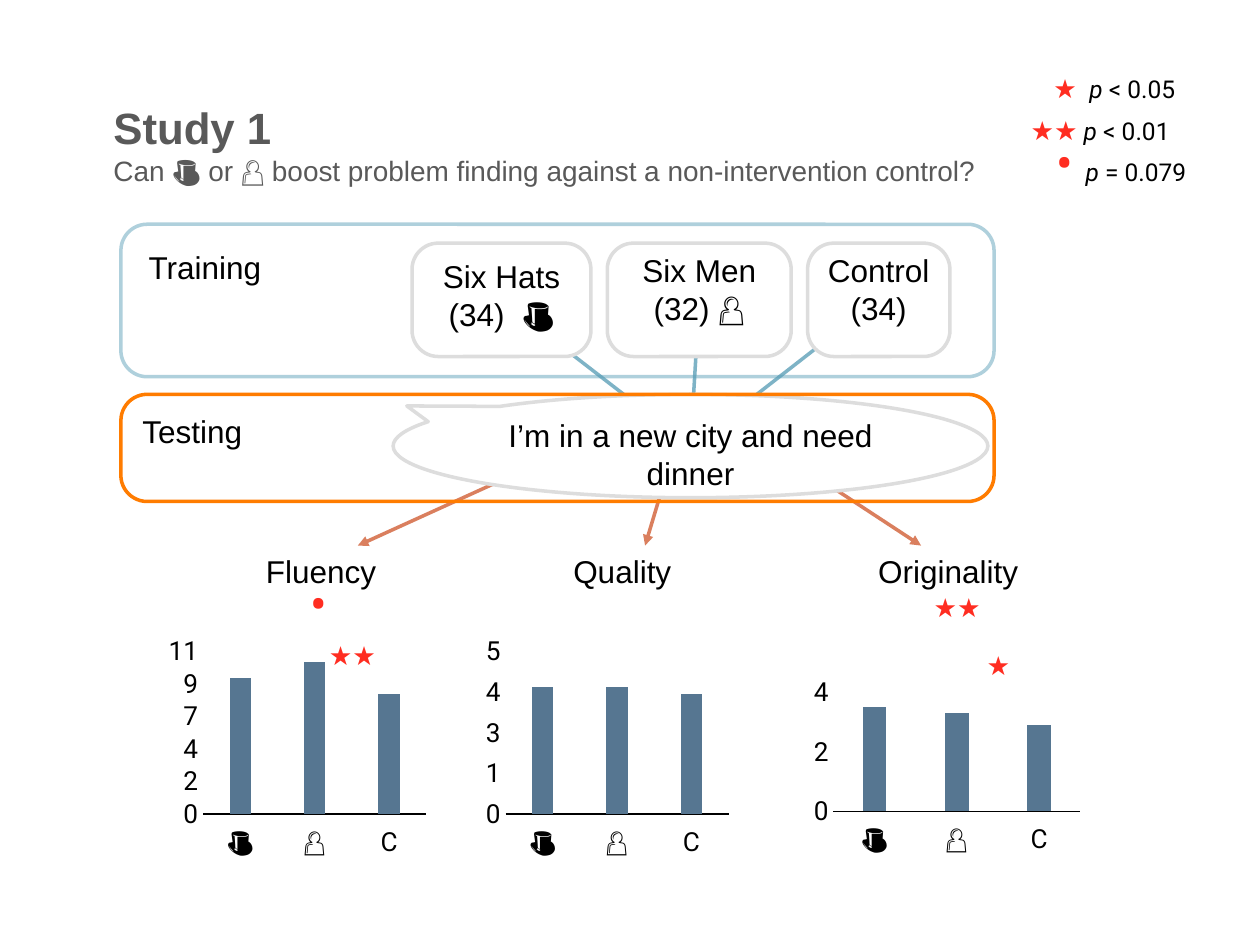
from pptx import Presentation
from pptx import util as u
from pptx.chart import data as cd
from pptx.dml.color import RGBColor
from pptx.enum import chart as ch, shapes, text
from pptx.oxml import parse_xml
from pptx.oxml.ns import nsdecls, qn
from lxml import etree

BLACK, WHITE, GRAY, PALE = "000000", "FFFFFF", "595959", "DDDDDD"
RED, TEAL, RUST, AMBER, STEEL = "FF2D21", "589DB6", "DA7F5E", "FF7C00", "567691"
HAT, MAN = "🎩", "👤"


def tint(code):
    return RGBColor.from_string(code)


class Deck:
    """Style and current slide; lengths count cells of a 100 x 75 grid."""
    sans, data = "Arial", "Roboto"

    def __init__(self):
        self.prs = Presentation()
        self.prs.slide_width, self.prs.slide_height = u.Inches(10), u.Inches(7.5)
        self.cell = self.prs.slide_width / 100
        self.slide = self.prs.slides.add_slide(self.prs.slide_layouts[5])

    def grid(self, *nums):
        return [round(n * self.cell) for n in nums]

    def run(self, para, words, size=18, color=BLACK, face=sans, bold=False, slant=False):
        run = para.add_run()
        run.text = words
        font = run.font
        font.size, font.name = u.Pt(size), face
        font.bold, font.italic = bold, slant
        font.color.rgb = tint(color)

    def frame(self, shape, inset, wrap=True, grow=False):
        tf = shape.text_frame
        tf.word_wrap = wrap
        tf.auto_size = (text.MSO_AUTO_SIZE.SHAPE_TO_FIT_TEXT if grow
                        else text.MSO_AUTO_SIZE.NONE)
        tf.vertical_anchor = text.MSO_ANCHOR.TOP
        side = self.grid(inset)[0]
        tf.margin_left = tf.margin_right = tf.margin_top = tf.margin_bottom = side
        return tf

    def title(self, box, head, sub):
        shape = self.slide.shapes.title
        shape.left, shape.top, shape.width, shape.height = self.grid(*box)
        para = self.frame(shape, 0.5, grow=True).paragraphs[0]
        para.alignment = text.PP_ALIGN.LEFT
        self.run(para, head, 25, GRAY, bold=True)
        para.add_line_break()
        self.run(para, sub, 16, GRAY)

    def label(self, box, *runs, inset=0.5):
        shape = self.slide.shapes.add_textbox(*self.grid(*box))
        para = self.frame(shape, inset, wrap=False, grow=True).paragraphs[0]
        for words, style in runs:
            self.run(para, words, **style)

    def stroke(self, line, color, alpha=100):
        line.width = u.Pt(2)
        line.color.rgb = tint(color)
        if alpha < 100:
            code = line._get_or_add_ln().find(".//" + qn("a:srgbClr"))
            etree.SubElement(code, qn("a:alpha")).set("val", str(alpha * 1000))

    def shape(self, kind, box, adj, color, alpha=100, lines=(), fill=None, inset=0):
        item = self.slide.shapes.add_shape(kind, *self.grid(*box))
        item.shadow.inherit = False
        for i, val in enumerate(adj):
            item.adjustments[i] = val
        if fill:
            item.fill.solid()
            item.fill.fore_color.rgb = tint(fill)
        else:
            item.fill.background()
        self.stroke(item.line, color, alpha)
        tf = self.frame(item, inset)
        for i, words in enumerate(lines):
            para = tf.add_paragraph() if i else tf.paragraphs[0]
            para.alignment = text.PP_ALIGN.CENTER
            self.run(para, words)

    def arrow(self, start, end, color, alpha=100, tip="tailEnd"):
        link = self.slide.shapes.add_connector(
            shapes.MSO_CONNECTOR.STRAIGHT, *self.grid(*start, *end))
        self.stroke(link.line, color, alpha)
        etree.SubElement(link.line._get_or_add_ln(), qn("a:" + tip)).set("type", "triangle")
        etree.SubElement(link._element.spPr, qn("a:effectLst"))

    def chart(self, box, name, vals, top, step, plot):
        data = cd.CategoryChartData(number_format="General")
        data.categories = [HAT, MAN, "C"]
        data.add_series(name, vals)
        chart = self.slide.shapes.add_chart(
            ch.XL_CHART_TYPE.COLUMN_CLUSTERED, *self.grid(*box), data).chart
        chart.has_title = chart.has_legend = False
        chart.font.size, chart.font.name = u.Pt(10), self.sans
        cat, val = chart.category_axis, chart.value_axis
        for axis in (cat, val):
            axis.major_tick_mark = axis.minor_tick_mark = ch.XL_TICK_MARK.NONE
            axis.has_major_gridlines = False
            font = axis.tick_labels.font
            font.size, font.name = u.Pt(15), self.data
            font.color.rgb = tint(BLACK)
        cat.tick_label_position = ch.XL_TICK_LABEL_POSITION.LOW
        cat.format.line.width = u.Pt(1)
        cat.format.line.color.rgb = tint(BLACK)
        val.format.line.fill.background()
        val.minimum_scale, val.maximum_scale, val.major_unit = 0, top, step
        val.tick_labels.number_format = "0"
        val.tick_labels.number_format_is_linked = False
        bars = chart.plots[0]
        bars.gap_width, bars.overlap, bars.vary_by_categories = 250, -10, False
        fill = bars.series[0].format.fill
        fill.solid()
        fill.fore_color.rgb = tint(STEEL)
        self.layout(chart, plot)

    def layout(self, chart, plot):
        area = chart._chartSpace.find(".//" + qn("c:plotArea"))
        for old in area.findall(qn("c:layout")):
            area.remove(old)
        marks = [("layoutTarget", "inner"), ("xMode", "edge"), ("yMode", "edge")]
        marks += zip("xywh", plot)
        body = "".join(f'<c:{tag} val="{val}"/>' for tag, val in marks)
        area.insert(0, parse_xml(f'<c:layout {nsdecls("c")}><c:manualLayout>{body}'
                                 '</c:manualLayout></c:layout>'))


def main():
    deck = Deck()
    hub = (54.8, 31.3)
    crown = (54.8, 35.4)
    star = dict(size=15, color=RED, face=deck.data)
    dot = dict(star, size=29)
    note = dict(size=14, face=deck.data)
    slant = dict(note, slant=True)

    # Title
    deck.title((8.5, 7.5, 70.4, 7.9), "Study 1",
               f"Can {HAT} or {MAN} boost problem finding against a non-intervention control?")

    # Arrows from the groups to the task, and on to the measures
    for x in (39.8, 69.7, 55.5):
        deck.arrow((x, 23.8), crown, TEAL, 76)
    for x in (28.4, 51.2, 73.1):
        deck.arrow(hub, (x, 43.3), RUST)

    # Measures with their charts
    measures = [
        ("Fluency", (20.6, 9.8), (12.1, 49.2, 21.8, 20), (9.2, 10.3, 8.1), 11, 2.2,
         (0.185, 0.125, 0.815, 0.647)),
        ("Quality", (45, 8.9), (37.1, 49.2, 20.8, 20), (3.9, 3.9, 3.7), 5, 1.25,
         (0.146, 0.125, 0.854, 0.647)),
        ("Originality", (69.2, 12.3), (62.8, 50.2, 23, 19), (3.5, 3.3, 2.9), 5, 2,
         (0.146, 0.125, 0.854, 0.623)),
    ]
    for name, (left, wide), box, *rest in measures:
        deck.label((left, 43.3, wide, 3.8), (name, {}))
        deck.chart(box, name, *rest)

    # Significance marks
    for box, mark, style in [((24, 44.8, 2.7, 6), "•", dot),
                             ((25.5, 50.1, 5.4, 3.1), "★★", star),
                             ((77.7, 50.9, 3.3, 3.1), "★", star),
                             ((73.5, 46.3, 5.4, 3.1), "★★", star)]:
        deck.label(box, (mark, style), inset=0.6)

    # Legend
    deck.label((81.2, 8.5, 13, 3.5), ("★★", star), (" ", note),
               ("p", slant), (" < 0.01", note), inset=0.6)
    deck.label((83.2, 9.8, 11.9, 6), ("• ", dot),
               ("p", slant), (" = 0.079", note), inset=0.6)
    deck.label((83, 3.2, 11.5, 6), ("★", star), (" ", dict(dot, color=BLACK)),
               ("p", slant), (" < 0.05", note), inset=0.6)

    # Task and training groups
    kind = shapes.MSO_SHAPE
    deck.shape(kind.OVAL_CALLOUT, (31.2, 31.3, 47.2, 8.2), (-0.477, -0.388), PALE,
               lines=["I’m in a new city and need dinner"], fill=WHITE, inset=0.5)
    for left, wide, lines, inset in [(32.7, 14.2, [f"Six Hats (34)  {HAT}"], 0.5),
                                     (48.2, 14.6, [f"Six Men (32) {MAN}"], 0),
                                     (64.1, 11.3, ["Control", "(34)"], 0)]:
        deck.shape(kind.ROUNDED_RECTANGLE, (left, 19.3, wide, 9), (0.231,), PALE,
                   lines=lines, fill=WHITE, inset=inset)

    # Stage frames
    for name, top, tall, adj, color, alpha, box, inset in [
            ("Training", 17.8, 12.1, 0.172, TEAL, 48, (11.3, 19.2, 10.1, 3.8), 0.5),
            ("Testing", 31.3, 8.5, 0.245, AMBER, 100, (11.3, 32.7, 9.1, 3.8), 0)]:
        deck.shape(kind.ROUNDED_RECTANGLE, (9.6, top, 69.3, tall), (adj,), color, alpha)
        deck.label(box, (name, {}), inset=inset)

    deck.prs.save("out.pptx")


if __name__ == "__main__":
    main()
